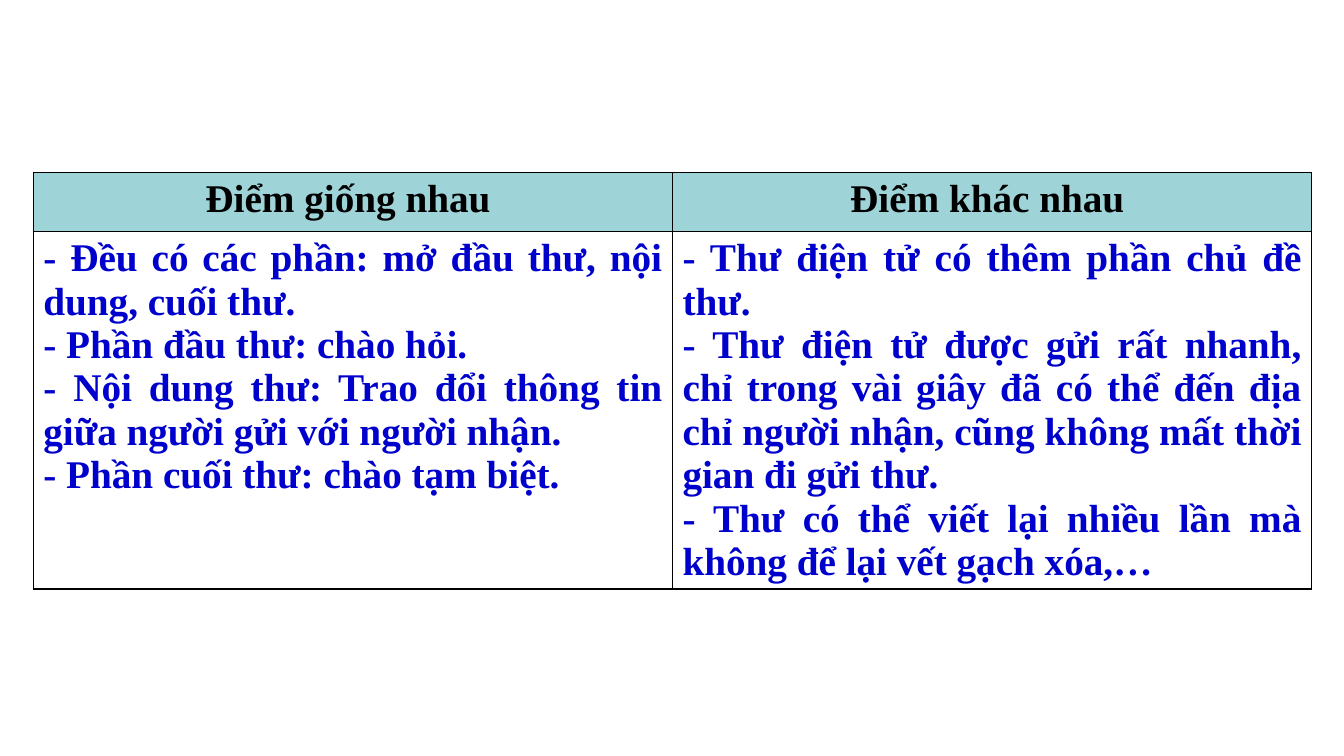
from pptx import Presentation
from pptx.dml.color import RGBColor
from pptx.enum.text import PP_ALIGN as Align
from pptx.oxml import parse_xml
from pptx.oxml.ns import nsdecls
from pptx.util import Inches, Pt

FONT = "Times New Roman"
BLACK = RGBColor(0x00, 0x00, 0x00)
BLUE = RGBColor(0x00, 0x00, 0xCC)
TEAL = RGBColor(0x9E, 0xD3, 0xD7)

HEADER_HEIGHT = 0.59
COLUMNS = [
    ("Điểm giống nhau ", [
        "- Đều có các phần: mở đầu thư, nội dung, cuối thư.",
        "- Phần đầu thư: chào hỏi.",
        "- Nội dung thư: Trao đổi thông tin giữa người gửi với người nhận.",
        "- Phần cuối thư: chào tạm biệt. ",
    ]),
    ("Điểm khác nhau ", [
        "- Thư điện tử có thêm phần chủ đề thư. ",
        "- Thư điện tử được gửi rất nhanh, chỉ trong vài giây đã có thể đến địa "
        "chỉ người nhận, cũng không mất thời gian đi gửi thư.",
        "- Thư có thể viết lại nhiều lần mà không để lại vết gạch xóa,…",
    ]),
]


def add_borders(cell):
    properties = cell._tc.get_or_add_tcPr()
    for position, side in enumerate(("lnL", "lnR", "lnT", "lnB")):
        line = parse_xml(
            f'<a:{side} {nsdecls("a")} w="{Pt(1)}"><a:solidFill>'
            f'<a:srgbClr val="{BLACK}"/></a:solidFill></a:{side}>')
        properties.insert(position, line)


def fill_cell(cell, lines, color, align, background=None):
    cell.text = "\n".join(lines)
    for para in cell.text_frame.paragraphs:
        para.alignment = align
        para.font.name = FONT
        para.font.size = Pt(28)
        para.font.bold = True
        para.font.color.rgb = color
    if background is None:
        cell.fill.background()
    else:
        cell.fill.solid()
        cell.fill.fore_color.rgb = background
    add_borders(cell)


def add_comparison(page, left, top, width, height):
    frame = page.shapes.add_table(2, len(COLUMNS), left, top, width, height)
    table = frame.table
    table.horz_banding = False
    table.rows[0].height = Inches(HEADER_HEIGHT)
    table.rows[1].height = height - Inches(HEADER_HEIGHT)
    for index, (heading, points) in enumerate(COLUMNS):
        fill_cell(table.cell(0, index), [heading], BLACK, Align.CENTER, TEAL)
        fill_cell(table.cell(1, index), points, BLUE, Align.JUSTIFY)


def main():
    deck = Presentation()
    deck.slide_width, deck.slide_height = Inches(13.33), Inches(7.5)
    page = deck.slides.add_slide(deck.slide_layouts[6])
    add_comparison(page, Inches(0.33), Inches(1.71), Inches(12.68), Inches(4.11))
    deck.save("out.pptx")


if __name__ == "__main__":
    main()
